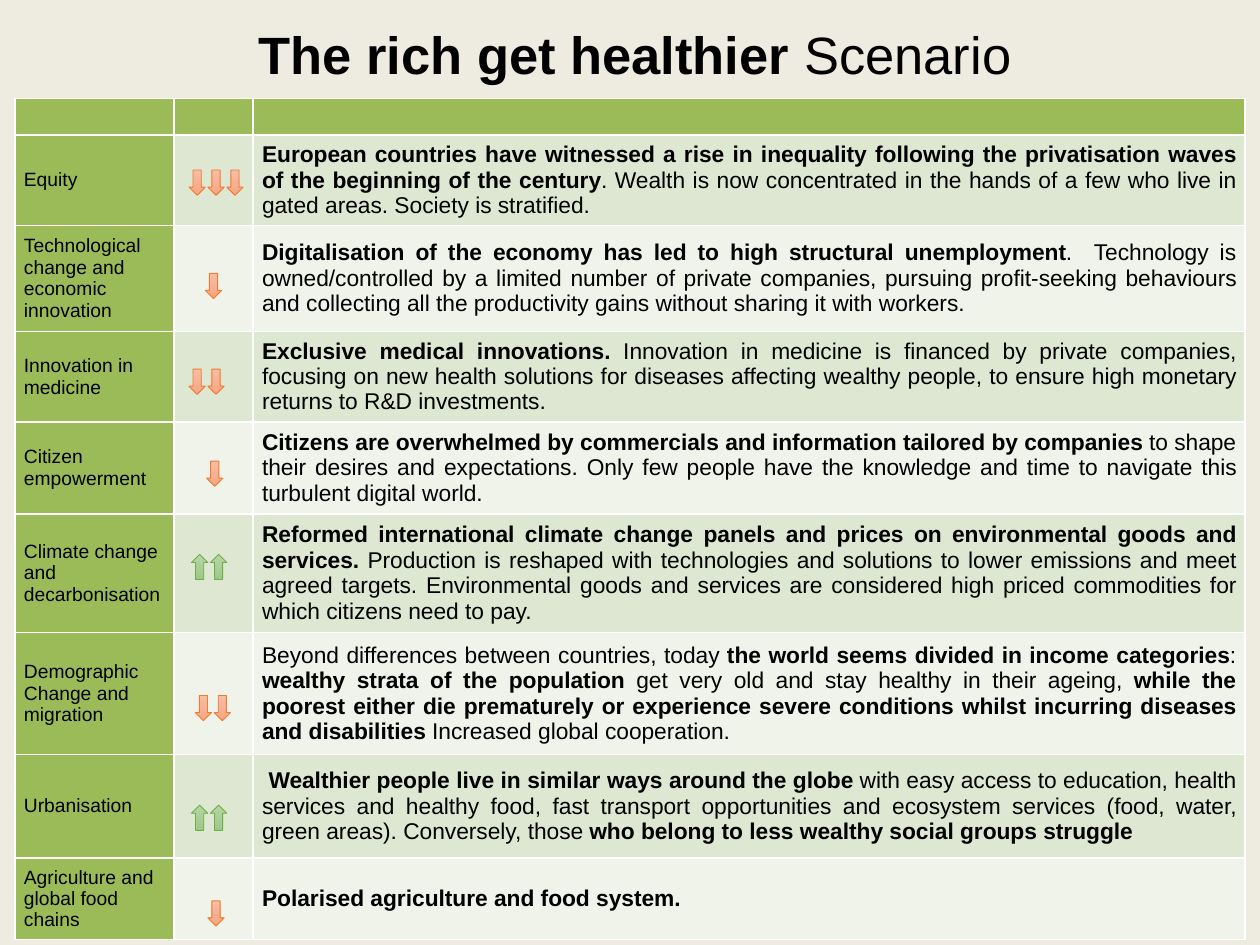
from pptx import Presentation
from pptx.dml.color import RGBColor
from pptx.enum.shapes import MSO_SHAPE as SHAPE
from pptx.enum.text import MSO_ANCHOR as ANCHOR, PP_ALIGN as ALIGN
from pptx.util import Inches, Pt

BLACK = RGBColor(0x00, 0x00, 0x00)
BEIGE = RGBColor(0xEE, 0xEC, 0xE1)
GREEN = RGBColor(0x9B, 0xBB, 0x59)
BANDS = (RGBColor(0xDE, 0xE7, 0xD1), RGBColor(0xEF, 0xF3, 0xEA))
# Arrow direction: shape, gradient start, gradient end, outline
DOWN = (SHAPE.DOWN_ARROW, RGBColor(0xF7, 0xBD, 0xA5),
        RGBColor(0xF8, 0xA5, 0x82), RGBColor(0xED, 0x7D, 0x31))
UP = (SHAPE.UP_ARROW, RGBColor(0xB5, 0xD5, 0xA7),
      RGBColor(0x9C, 0xC9, 0x87), RGBColor(0x70, 0xAD, 0x47))

COL_WIDTHS = (1.26, 0.63, 7.87)
HEADER_HEIGHT = 0.29

# Row height, driver, description; ** switches bold on and off
DRIVERS = [
    (0.72, "Equity",
     "**European countries have witnessed a rise in inequality following the "
     "privatisation waves of the beginning of the century**. Wealth is now "
     "concentrated in the hands of a few who live in gated areas. Society is "
     "stratified."),
    (0.84, "Technological change and economic innovation",
     "**Digitalisation of the economy has led to high structural "
     "unemployment**.  Technology is owned/controlled by a limited number of "
     "private companies, pursuing profit-seeking behaviours and collecting all "
     "the productivity gains without sharing it with workers."),
    (0.72, "Innovation in medicine",
     "**Exclusive medical innovations.** Innovation in medicine is financed by "
     "private companies, focusing on new health solutions for diseases "
     "affecting wealthy people, to ensure high monetary returns to R&D "
     "investments."),
    (0.73, "Citizen empowerment",
     "**Citizens are overwhelmed by commercials and information tailored by "
     "companies **to shape their desires and expectations. Only few people "
     "have the knowledge and time to navigate this turbulent digital world."),
    (0.94, "Climate change and decarbonisation",
     "**Reformed international climate change panels and prices on "
     "environmental goods and services. **Production is reshaped with "
     "technologies and solutions to lower emissions and meet agreed targets. "
     "Environmental goods and services are considered high priced commodities "
     "for which citizens need to pay."),
    (0.97, "Demographic Change and migration",
     "Beyond differences between countries, today **the world seems divided in "
     "income categories**: **wealthy strata of the population** get very old "
     "and stay healthy in their ageing, **while the poorest either die "
     "prematurely or experience severe conditions whilst incurring diseases "
     "and disabilities** Increased global cooperation."),
    (0.82, "Urbanisation",
     "** Wealthier people live in similar ways around the globe **with easy "
     "access to education, health services and healthy food, fast transport "
     "opportunities and ecosystem services (food, water, green areas). "
     "Conversely, those **who belong to less wealthy social groups struggle**"),
    (0.65, "Agriculture and global food chains",
     "**Polarised agriculture and food system.**"),
]

# Left, top, count, direction
TRENDS = [
    (1.5, 1.35, 3, DOWN), (1.63, 2.17, 1, DOWN), (1.5, 2.93, 2, DOWN),
    (1.64, 3.66, 1, DOWN), (1.52, 4.4, 2, UP), (1.55, 5.52, 2, DOWN),
    (1.52, 6.39, 2, UP), (1.65, 7.15, 1, DOWN),
]


class SlideBuilder:
    font = "Arial"
    arrow_size = (0.13, 0.2)
    arrow_pitch = 0.15

    def __init__(self, slide):
        self.s = slide
        fill = slide.background.fill
        fill.solid()
        fill.fore_color.rgb = BEIGE

    def rich_text(self, p, text, size, align):
        """Fill a paragraph, reading ** as the bold switch."""
        p.alignment = align
        p.font.name = self.font
        p.font.size = Pt(size)
        p.font.color.rgb = BLACK
        for i, part in enumerate(text.split("**")):
            if part:
                r = p.add_run()
                r.text = part
                r.font.bold = i % 2 == 1

    def title(self, text, left, top, width, height):
        sp = self.s.shapes.title
        sp.left, sp.top = Inches(left), Inches(top)
        sp.width, sp.height = Inches(width), Inches(height)
        tf = sp.text_frame
        tf.vertical_anchor = ANCHOR.MIDDLE
        self.rich_text(tf.paragraphs[0], text, 30, ALIGN.CENTER)

    def cell(self, cell, color, text="", size=11, align=ALIGN.LEFT, pad=0.04):
        cell.fill.solid()
        cell.fill.fore_color.rgb = color
        cell.vertical_anchor = ANCHOR.MIDDLE
        cell.margin_left = cell.margin_right = Inches(0.07)
        cell.margin_top = cell.margin_bottom = Inches(pad)
        self.rich_text(cell.text_frame.paragraphs[0], text, size, align)

    def table(self, left, top, drivers):
        heights = [HEADER_HEIGHT] + [height for height, _, _ in drivers]
        table = self.s.shapes.add_table(
            len(heights), len(COL_WIDTHS), Inches(left), Inches(top),
            Inches(sum(COL_WIDTHS)), Inches(sum(heights))).table
        for column, width in zip(table.columns, COL_WIDTHS):
            column.width = Inches(width)
        for row, height in zip(table.rows, heights):
            row.height = Inches(height)
        for header in table.rows[0].cells:
            self.cell(header, GREEN, pad=0)
        for i, (_, name, description) in enumerate(drivers):
            driver, trend, detail = table.rows[i + 1].cells
            band = BANDS[i % 2]
            self.cell(driver, GREEN, name)
            self.cell(trend, band)
            self.cell(detail, band, description, 13, ALIGN.JUSTIFY)

    def arrows(self, left, top, count, direction):
        shape, start, end, outline = direction
        width, height = self.arrow_size
        for i in range(count):
            sp = self.s.shapes.add_shape(
                shape, Inches(left + i * self.arrow_pitch), Inches(top),
                Inches(width), Inches(height))
            sp.shadow.inherit = False
            sp.fill.gradient()
            sp.fill.gradient_angle = 270
            for stop, color in zip(sp.fill.gradient_stops, (start, end)):
                stop.color.rgb = color
            sp.line.color.rgb = outline
            sp.line.width = Pt(0.5)


def main():
    prs = Presentation()
    prs.slide_width, prs.slide_height = Inches(10), Inches(7.5)
    builder = SlideBuilder(prs.slides.add_slide(prs.slide_layouts[5]))
    builder.title("**The rich get healthier **Scenario", 0.54, 0.04, 9, 0.77)
    builder.table(0.12, 0.78, DRIVERS)
    for trend in TRENDS:
        builder.arrows(*trend)
    prs.save("out.pptx")


if __name__ == "__main__":
    main()
